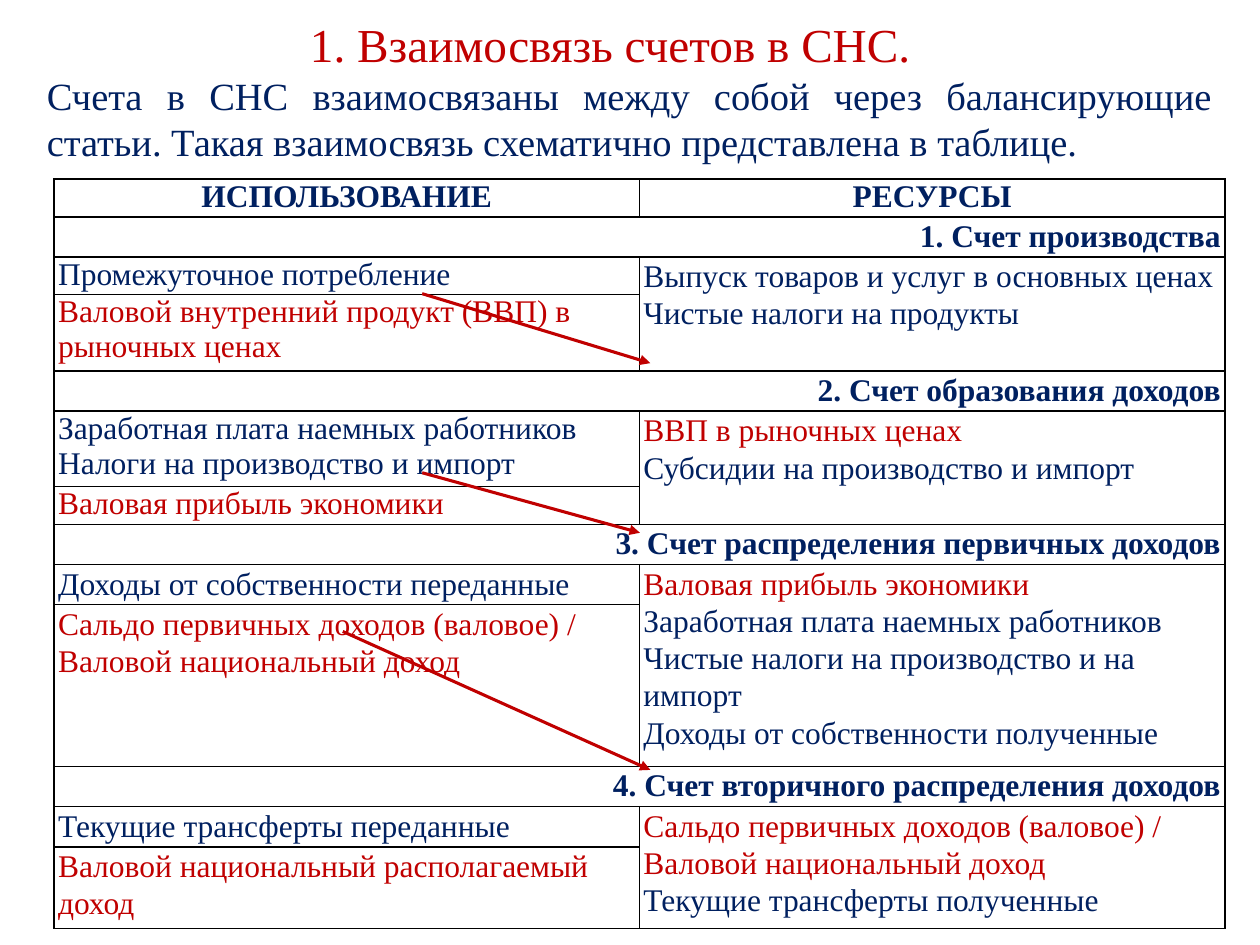
import pptx
import pptx.util
import pptx.dml.color
import pptx.enum.text
import pptx.enum.shapes
import pptx.oxml
import pptx.oxml.ns

Cm = pptx.util.Cm
Pt = pptx.util.Pt
ALIGN = pptx.enum.text.PP_ALIGN
COLORS = {"navy": "002060", "red": "C00000", "black": "000000"}
FONT = "Times New Roman"

TITLE = "1. Взаимосвязь счетов в СНС."
INTRO = ("Счета в СНС взаимосвязаны между собой через балансирующие статьи. "
         "Такая взаимосвязь схематично представлена в таблице.")
HEADERS = ["ИСПОЛЬЗОВАНИЕ", "РЕСУРСЫ"]
ACCOUNTS = [
    {"name": "1. Счет производства",
     "uses": "Промежуточное потребление",
     "balance": "Валовой внутренний продукт (ВВП) в рыночных ценах",
     "resources": [[("Выпуск товаров и услуг в основных ценах", "navy")],
                   [("Чистые налоги на продукты", "navy")]],
     "spacing": 1.0},
    {"name": "2. Счет образования доходов",
     "uses": "Заработная плата наемных работников\nНалоги на производство и импорт",
     "balance": "Валовая прибыль экономики",
     "resources": [[("ВВП в рыночных ценах\n", "red"),
                    ("Субсидии на производство и импорт", "navy")]],
     "spacing": 1.0},
    {"name": "3. Счет распределения первичных доходов",
     "uses": "Доходы от собственности переданные",
     "balance": "Сальдо первичных доходов (валовое) / Валовой национальный доход",
     "resources": [[("Валовая прибыль экономики", "red")],
                   [("Заработная плата наемных работников\n"
                     "Чистые налоги на производство и на импорт\n"
                     "Доходы от собственности полученные", "navy")]],
     "spacing": 1.07},
    {"name": "4. Счет вторичного распределения доходов",
     "uses": "Текущие трансферты переданные",
     "balance": "Валовой национальный располагаемый доход",
     "resources": [[("Сальдо первичных доходов (валовое) / Валовой национальный доход\n", "red"),
                    ("Текущие трансферты полученные", "navy")]],
     "spacing": 1.07},
]
ROW_HEIGHTS = [0.76, 0.81, 0.76, 1.54, 0.81, 1.52, 0.76, 0.81, 0.81, 3.26, 0.81, 0.81, 1.65]
COLUMN_WIDTH = 11.8
ARROWS = [((8.51, 5.92), (13.11, 7.32)),
          ((8.51, 9.53), (12.9, 12.19)),
          ((6.91, 12.73), (13.11, 15.52))]
ARROWS[1] = ((8.51, 9.53), (12.9, 10.74))


def write(frame, paragraphs, color="navy", size=18, bold=False, align=ALIGN.LEFT, spacing=1.0):
    if isinstance(paragraphs, str):
        paragraphs = [[(paragraphs, color)]]
    for index, spans in enumerate(paragraphs):
        para = frame.add_paragraph() if index else frame.paragraphs[0]
        para.alignment = align
        para.line_spacing = spacing
        para.space_before = Pt(0)
        for text, shade in spans:
            for number, line in enumerate(text.split("\n")):
                if number:
                    para.add_line_break()
                if line:
                    span = para.add_run()
                    span.text = line
                    span.font.name = FONT
                    span.font.size = Pt(size)
                    span.font.bold = bold
                    span.font.color.rgb = pptx.dml.color.RGBColor.from_string(COLORS[shade])


def place(box, left, top, width, height):
    box.left, box.top, box.width, box.height = Cm(left), Cm(top), Cm(width), Cm(height)
    frame = box.text_frame
    frame.word_wrap = True
    frame.auto_size = pptx.enum.text.MSO_AUTO_SIZE.NONE
    frame.vertical_anchor = pptx.enum.text.MSO_ANCHOR.TOP
    return frame


def format_cell(cell):
    cell.margin_left = cell.margin_right = Cm(0.08)
    cell.margin_top = cell.margin_bottom = 0
    cell.fill.background()
    properties = cell._tc.get_or_add_tcPr()
    for index, side in enumerate(["lnL", "lnR", "lnT", "lnB"]):
        properties.insert(index, pptx.oxml.parse_xml(
            f'<a:{side} {pptx.oxml.ns.nsdecls("a")} w="12700"><a:solidFill>'
            f'<a:srgbClr val="{COLORS["black"]}"/></a:solidFill></a:{side}>'))


def add_accounts(page):
    table = page.shapes.add_table(len(ROW_HEIGHTS), 2, Cm(1.09), Cm(3.61),
                                  Cm(2 * COLUMN_WIDTH), Cm(sum(ROW_HEIGHTS))).table
    table.first_row = table.horz_banding = False
    for column in table.columns:
        column.width = Cm(COLUMN_WIDTH)
    for row, height in zip(table.rows, ROW_HEIGHTS):
        row.height = Cm(height)
    for cell in table.iter_cells():
        format_cell(cell)
    for index, header in enumerate(HEADERS):
        write(table.cell(0, index).text_frame, header, bold=True, align=ALIGN.CENTER)
    for index, account in enumerate(ACCOUNTS):
        top = 1 + 3 * index
        name, uses, balance = (table.cell(top + step, 0) for step in range(3))
        resources = table.cell(top + 1, 1)
        name.merge(table.cell(top, 1))
        resources.merge(table.cell(top + 2, 1))
        write(name.text_frame, account["name"], bold=True, align=ALIGN.RIGHT, spacing=1.07)
        write(uses.text_frame, account["uses"], spacing=account["spacing"])
        write(balance.text_frame, account["balance"], color="red", spacing=account["spacing"])
        write(resources.text_frame, account["resources"], spacing=1.07)


def add_arrow(page, start, end):
    arrow = page.shapes.add_connector(pptx.enum.shapes.MSO_CONNECTOR.STRAIGHT,
                                      *map(Cm, start + end))
    arrow.line.color.rgb = pptx.dml.color.RGBColor.from_string(COLORS["red"])
    arrow.line.width = Pt(1.75)
    namespace = pptx.oxml.ns.nsdecls("a")
    arrow.line._get_or_add_ln().append(
        pptx.oxml.parse_xml(f'<a:tailEnd {namespace} type="triangle"/>'))
    arrow._element.spPr.append(pptx.oxml.parse_xml(f'<a:effectLst {namespace}/>'))


def main():
    deck = pptx.Presentation()
    deck.slide_width, deck.slide_height = Cm(25.4), Cm(19.05)
    page = deck.slides.add_slide(deck.slide_layouts[1])
    write(place(page.shapes.title, 0.3, 0.18, 24, 1.42), TITLE,
          color="red", size=27, align=ALIGN.CENTER)
    intro = place(page.placeholders[1], 0.69, 1.32, 24, 2.13)
    properties = intro.paragraphs[0]._p.get_or_add_pPr()
    properties.set("marL", "0")
    properties.set("indent", "0")
    properties.append(pptx.oxml.parse_xml(f'<a:buNone {pptx.oxml.ns.nsdecls("a")}/>'))
    write(intro, INTRO, size=22, align=ALIGN.JUSTIFY)
    add_accounts(page)
    for start, end in ARROWS:
        add_arrow(page, start, end)
    deck.save("out.pptx")


if __name__ == "__main__":
    main()
